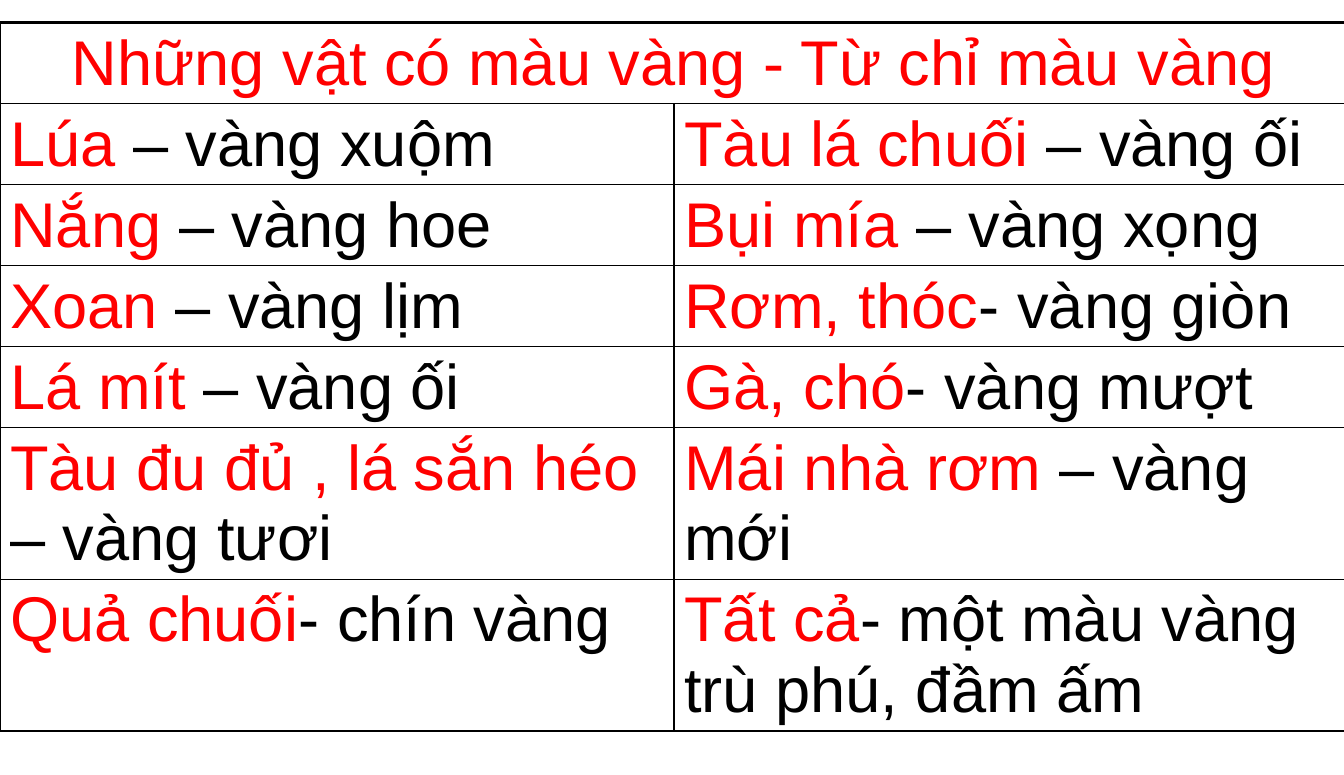
from lxml import etree
from pptx import Presentation
from pptx.dml.color import RGBColor
from pptx.enum.text import PP_ALIGN
from pptx.oxml.ns import qn
from pptx.util import Inches, Pt

CENTER = PP_ALIGN.CENTER
RED, BLACK = "FF0000", "000000"
THICK, THIN = Pt(2.25), Pt(1)

title = "Những vật có màu vàng - Từ chỉ màu vàng"
pairs = [
    [("Lúa", " – vàng xuộm"), ("Tàu lá chuối", " – vàng ối")],
    [("Nắng", " – vàng hoe"), ("Bụi mía", " – vàng xọng")],
    [("Xoan", " – vàng lịm"), ("Rơm, thóc", "- vàng giòn")],
    [("Lá mít", " – vàng ối"), ("Gà, chó", "- vàng mượt")],
    [("Tàu đu đủ , lá sắn héo", " – vàng tươi"), ("Mái nhà rơm", " – vàng mới")],
    [("Quả chuối", "- chín vàng"), ("Tất cả", "- một màu vàng trù phú, đầm ấm")],
]
heights = [0.62] + [0.73] * 4 + [1.15] * 2


def write(cell, *parts):
    """Add each (text, colour) part as a run, with 20% space before."""
    para = cell.text_frame.paragraphs[0]
    gap = etree.SubElement(para._p.get_or_add_pPr(), qn("a:spcBef"))
    etree.SubElement(gap, qn("a:spcPct"), val="20000")
    for text, color in parts:
        run = para.add_run()
        run.text = text
        run.font.name = "Arial"
        run.font.size = Pt(44)
        run.font.color.rgb = RGBColor.from_string(color)
    return para


def border(cell, side, width):
    line = etree.SubElement(cell._tc.get_or_add_tcPr(), qn("a:ln" + side), w=str(width))
    fill = etree.SubElement(line, qn("a:solidFill"))
    etree.SubElement(fill, qn("a:srgbClr"), val=BLACK)


prs = Presentation()
prs.slide_width, prs.slide_height = Inches(13), Inches(7.5)
slide = prs.slides.add_slide(prs.slide_layouts[6])

count = len(heights)
frame = slide.shapes.add_table(
    count, 2, Inches(0), Inches(0.22), Inches(13.04), Inches(sum(heights))
)
table = frame.table
table.first_row = table.horz_banding = False
for row, height in zip(table.rows, heights):
    row.height = Inches(height)

# Thick outer frame, thin inner lines
for r in range(count):
    for c in range(2):
        cell = table.cell(r, c)
        outer = {"L": c == 0, "R": c == 1, "T": r == 0, "B": r == count - 1}
        if r == 0:
            outer["L"] = outer["R"] = True
        for side, edge in outer.items():
            border(cell, side, THICK if edge else THIN)
        cell.fill.background()

head = table.cell(0, 0)
head.merge(table.cell(0, 1))
write(head, (title, RED)).alignment = CENTER

for r, pair in enumerate(pairs, 1):
    for c, (thing, shade) in enumerate(pair):
        write(table.cell(r, c), (thing, RED), (shade, BLACK))

prs.save("out.pptx")
